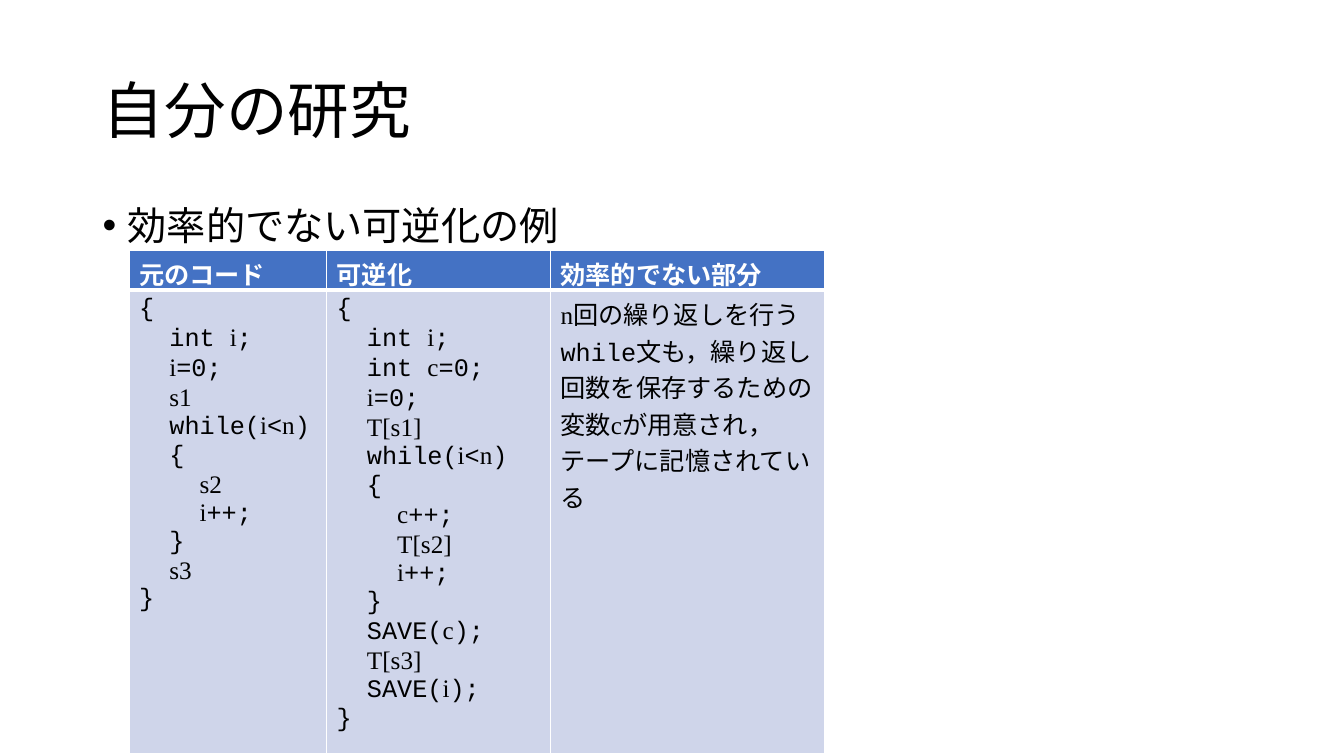
from dataclasses import dataclass

from lxml.etree import SubElement
from pptx import Presentation
from pptx.dml.color import RGBColor
from pptx.enum.lang import MSO_LANGUAGE_ID
from pptx.enum.text import MSO_ANCHOR, MSO_AUTO_SIZE, PP_ALIGN
from pptx.oxml.ns import qn
from pptx.table import _Cell
from pptx.text.text import _Paragraph, _Run
from pptx.util import Inches, Pt


@dataclass(frozen=True)
class Theme:
    japanese: str = "Noto Sans CJK JP"
    code: str = "Courier New"
    variable: str = "Times New Roman"
    title_size: int = 44
    bullet_size: int = 28
    table_size: int = 18
    text: str = "000000"
    white: str = "FFFFFF"
    header: str = "4472C4"
    body: str = "CFD5EA"
    thin: int = 1
    thick: int = 3


@dataclass(frozen=True)
class Column:
    heading: str
    width: float
    lines: tuple[str, ...]


THEME = Theme()
VARIABLE_MARK = "`"
LEVEL_MARK = ">"
LEVEL_INDENT = 0.3
ROW_HEIGHTS = (0.33, 2.8)

COLUMNS = (
    Column("元のコード", 1.96, (
        "{",
        ">int `i`;",
        ">`i`=0;",
        ">`s1`",
        ">while(`i`<`n`)",
        ">{",
        ">>`s2`",
        ">>`i`++;",
        ">}",
        ">`s3`",
        "}",
    )),
    Column("可逆化", 2.22, (
        "{",
        ">int `i`;",
        ">int `c`=0;",
        ">`i`=0;",
        ">`T[s1]`",
        ">while(`i`<`n`)",
        ">{",
        ">>`c`++;",
        ">>`T[s2]`",
        ">>`i`++;",
        ">}",
        ">SAVE(`c`);",
        ">`T[s3]`",
        ">SAVE(`i`);",
        "}",
    )),
    Column("効率的でない部分", 2.72, (
        "`n`回の繰り返しを行うwhile文も，繰り返し回数を保存するための変数"
        "`c`が用意され，テープに記憶されている",
    )),
)


def format_span(span: _Run, font: str, size: int, color: str, bold: bool = False) -> None:
    span.font.name = font
    span.font.size = Pt(size)
    span.font.bold = bold
    span.font.color.rgb = RGBColor.from_string(color)
    span.font.language_id = MSO_LANGUAGE_ID.JAPANESE
    properties = span.font._element
    SubElement(properties, qn("a:ea")).set("typeface", THEME.japanese)


def set_indent(para: _Paragraph, left: float, first: float = 0) -> None:
    properties = para._p.get_or_add_pPr()
    properties.set("marL", str(Inches(left)))
    properties.set("indent", str(Inches(first)))


def add_bullet(para: _Paragraph) -> None:
    set_indent(para, 0.25, -0.25)
    properties = para._p.get_or_add_pPr()
    SubElement(properties, qn("a:buFont")).set("typeface", "Arial")
    SubElement(properties, qn("a:buChar")).set("char", "•")


def write_line(para: _Paragraph, line: str) -> None:
    text = line.lstrip(LEVEL_MARK)
    set_indent(para, LEVEL_INDENT * (len(line) - len(text)))
    for index, part in enumerate(text.split(VARIABLE_MARK)):
        if part:
            span = para.add_run()
            span.text = part
            font = THEME.variable if index % 2 else THEME.code
            format_span(span, font, THEME.table_size, THEME.text)


def style_cell(cell: _Cell, fill: str, top: int, bottom: int) -> None:
    properties = cell._tc.get_or_add_tcPr()
    edges = {"a:lnL": THEME.thin, "a:lnR": THEME.thin, "a:lnT": top, "a:lnB": bottom}
    for tag, width in edges.items():
        edge = SubElement(properties, qn(tag))
        edge.set("w", str(Pt(width)))
        solid = SubElement(edge, qn("a:solidFill"))
        SubElement(solid, qn("a:srgbClr")).set("val", THEME.white)
    cell.fill.solid()
    cell.fill.fore_color.rgb = RGBColor.from_string(fill)


def add_title(page) -> None:
    title = page.shapes.title
    title.left, title.top = Inches(0.92), Inches(0.4)
    title.width, title.height = Inches(11.5), Inches(1.45)
    frame = title.text_frame
    frame.text = "自分の研究"
    frame.auto_size = MSO_AUTO_SIZE.NONE
    frame.vertical_anchor = MSO_ANCHOR.MIDDLE
    para = frame.paragraphs[0]
    para.alignment = PP_ALIGN.LEFT
    para.line_spacing = 0.9
    format_span(para.runs[0], THEME.japanese, THEME.title_size, THEME.text)


def add_example_heading(page) -> None:
    box = page.shapes.add_textbox(Inches(0.92), Inches(2), Inches(11.5), Inches(4.76))
    frame = box.text_frame
    frame.word_wrap = True
    frame.text = "効率的でない可逆化の例"
    para = frame.paragraphs[0]
    para.line_spacing = 0.9
    para.space_before = Pt(10)
    add_bullet(para)
    format_span(para.runs[0], THEME.japanese, THEME.bullet_size, THEME.text)


def add_code_table(page) -> None:
    width = sum(column.width for column in COLUMNS)
    table = page.shapes.add_table(
        len(ROW_HEIGHTS), len(COLUMNS),
        Inches(1.28), Inches(2.48), Inches(width), Inches(sum(ROW_HEIGHTS)),
    ).table
    table.horz_banding = False
    for row, height in zip(table.rows, ROW_HEIGHTS):
        row.height = Inches(height)
    for index, column in enumerate(COLUMNS):
        table.columns[index].width = Inches(column.width)
        heading, body = table.cell(0, index), table.cell(1, index)
        style_cell(heading, THEME.header, THEME.thin, THEME.thick)
        style_cell(body, THEME.body, THEME.thick, THEME.thin)
        heading.text_frame.text = column.heading
        span = heading.text_frame.paragraphs[0].runs[0]
        format_span(span, THEME.japanese, THEME.table_size, THEME.white, bold=True)
        frame = body.text_frame
        for number, line in enumerate(column.lines):
            para = frame.add_paragraph() if number else frame.paragraphs[0]
            write_line(para, line)


def main() -> None:
    deck = Presentation()
    deck.slide_width, deck.slide_height = Inches(13.33), Inches(7.5)
    page = deck.slides.add_slide(deck.slide_layouts[5])
    add_title(page)
    add_example_heading(page)
    add_code_table(page)
    deck.save("out.pptx")


if __name__ == "__main__":
    main()
